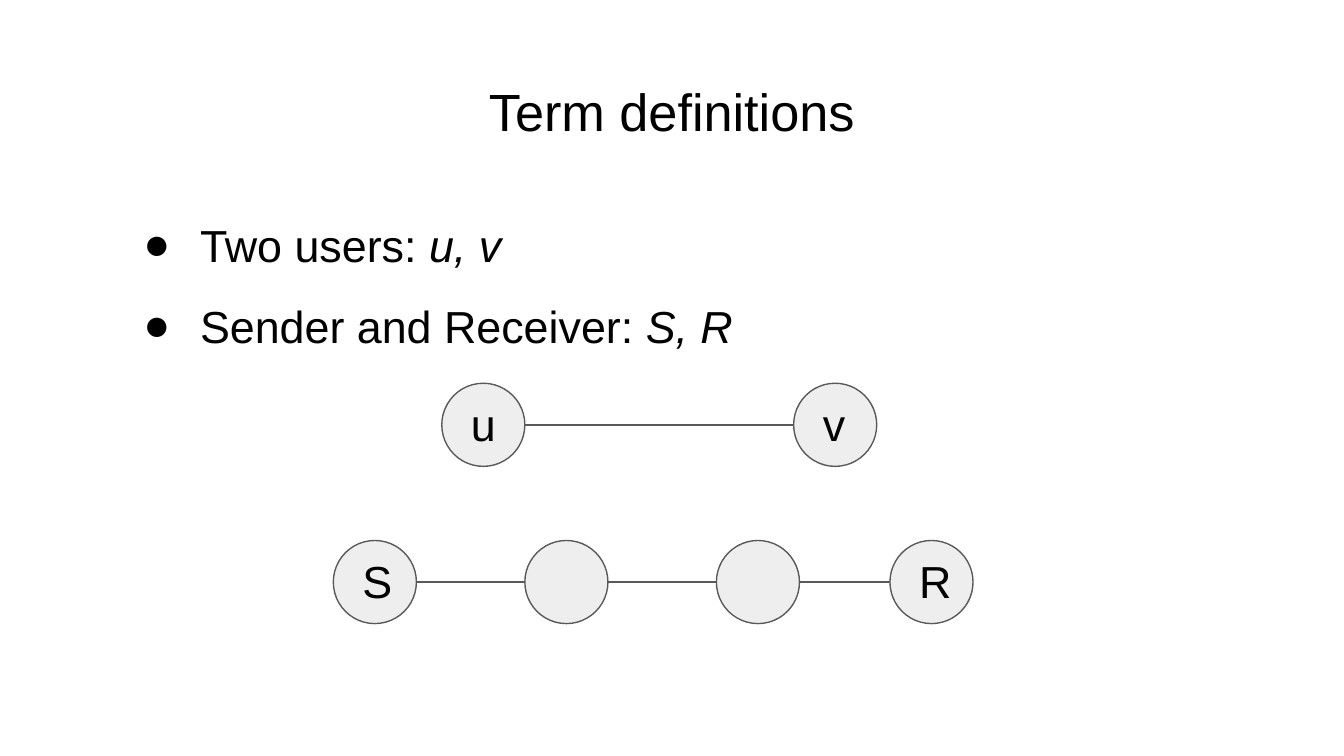
import pptx
import pptx.util
import pptx.dml.color
import pptx.enum.shapes
import pptx.enum.text
import pptx.oxml
import pptx.oxml.ns
from pptx.util import Cm

FONT = "Arial"
BLACK, NODE_FILL, NODE_LINE = "000000", "EEEEEE", "595959"
DIAMETER = 1.57
INSET = 0.25


def color(hex_string):
    return pptx.dml.color.RGBColor.from_string(hex_string)


def format_run(run, size, italic=False):
    run.font.name = FONT
    run.font.size = pptx.util.Pt(size)
    run.font.italic = italic
    run.font.color.rgb = color(BLACK)


def place(shape, left, top, width, height):
    shape.left, shape.top = Cm(left), Cm(top)
    shape.width, shape.height = Cm(width), Cm(height)


def prepare_frame(text_frame):
    text_frame.word_wrap = True
    text_frame.auto_size = pptx.enum.text.MSO_AUTO_SIZE.NONE
    text_frame.vertical_anchor = pptx.enum.text.MSO_ANCHOR.TOP
    text_frame.margin_left = text_frame.margin_right = Cm(INSET)
    text_frame.margin_top = text_frame.margin_bottom = Cm(INSET)


def set_bullet(paragraph, character):
    properties = paragraph._p.get_or_add_pPr()
    properties.set("marL", str(Cm(1.27)))
    properties.set("indent", str(Cm(-1.07)))
    namespace = pptx.oxml.ns.nsdecls("a")
    for xml in (
        f'<a:buClr {namespace}><a:srgbClr val="{BLACK}"/></a:buClr>',
        f'<a:buFont {namespace} typeface="{FONT}"/>',
        f'<a:buChar {namespace} char="{character}"/>',
    ):
        properties.append(pptx.oxml.parse_xml(xml))


def add_title(slide, text, left, top, width, height):
    title = slide.shapes.title
    place(title, left, top, width, height)
    prepare_frame(title.text_frame)
    title.text_frame.text = text
    paragraph = title.text_frame.paragraphs[0]
    paragraph.alignment = pptx.enum.text.PP_ALIGN.CENTER
    format_run(paragraph.runs[0], 28)


def add_terms(slide, terms, left, top, width, height):
    body = slide.placeholders[1]
    place(body, left, top, width, height)
    text_frame = body.text_frame
    prepare_frame(text_frame)
    text_frame.text = "\n".join(term for term, _ in terms)
    for paragraph, (_, symbols) in zip(text_frame.paragraphs, terms):
        paragraph.line_spacing = 1.5
        paragraph.space_before = pptx.util.Pt(0)
        set_bullet(paragraph, "●")
        format_run(paragraph.runs[0], 24)
        symbol_run = paragraph.add_run()
        symbol_run.text = symbols
        format_run(symbol_run, 24, italic=True)


def add_node(slide, label, left, top):
    circle = slide.shapes.add_shape(
        pptx.enum.shapes.MSO_SHAPE.OVAL, Cm(left), Cm(top), Cm(DIAMETER), Cm(DIAMETER))
    circle.shadow.inherit = False
    circle.fill.solid()
    circle.fill.fore_color.rgb = color(NODE_FILL)
    circle.line.color.rgb = color(NODE_LINE)
    circle.line.width = pptx.util.Pt(0.75)
    if label:
        text_box = slide.shapes.add_textbox(Cm(left + 0.3), Cm(top), Cm(1.12), Cm(1.37))
        prepare_frame(text_box.text_frame)
        text_box.text_frame.text = label
        format_run(text_box.text_frame.paragraphs[0].runs[0], 24)


def add_link(slide, start, end, height):
    link = slide.shapes.add_connector(
        pptx.enum.shapes.MSO_CONNECTOR.STRAIGHT, Cm(start), Cm(height), Cm(end), Cm(height))
    link.line.color.rgb = color(NODE_LINE)
    link.line.width = pptx.util.Pt(0.75)
    link._element.spPr.append(
        pptx.oxml.parse_xml(f'<a:effectLst {pptx.oxml.ns.nsdecls("a")}/>'))


def add_chain(slide, nodes, left, top):
    """Draw a row of linked nodes, given as (label, offset from left)."""
    for label, offset in nodes:
        add_node(slide, label, left + offset, top)
    for (_, offset), (_, next_offset) in zip(nodes, nodes[1:]):
        add_link(slide, left + offset + DIAMETER, left + next_offset, top + DIAMETER / 2)


def main():
    presentation = pptx.Presentation()
    presentation.slide_width, presentation.slide_height = Cm(25.4), Cm(14.28)
    slide = presentation.slides.add_slide(presentation.slide_layouts[1])

    # Heading and list of terms
    add_title(slide, "Term definitions", 0.86, 1.24, 23.67, 1.6)
    terms = [("Two users: ", "u, v"), ("Sender and Receiver: ", "S, R")]
    add_terms(slide, terms, 2.26, 3.35, 20.9, 3.05)

    # Pair of users, then the path from sender to receiver
    add_chain(slide, [("u", 0), ("v", 6.65)], 8.35, 7.24)
    add_chain(slide, [("S", 0), ("", 3.62), ("", 7.24), ("R", 10.52)], 6.3, 10.21)

    presentation.save("out.pptx")


if __name__ == "__main__":
    main()
